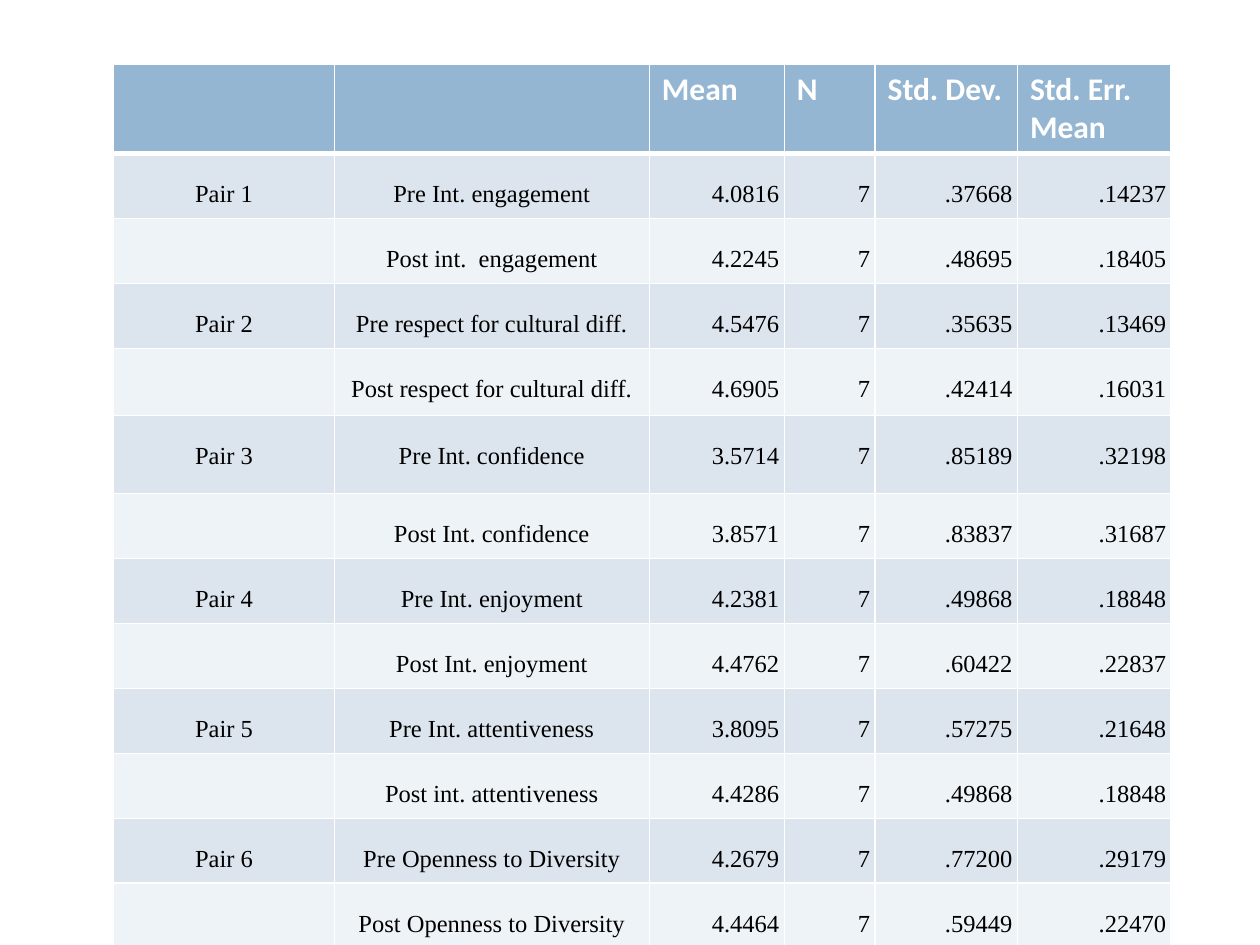
from dataclasses import dataclass

from lxml import etree
from pptx import Presentation
from pptx import util as u
from pptx.dml.color import RGBColor
from pptx.enum import text
from pptx.oxml import ns

HUES = {
    "head": "94B6D2",
    "odd": "DCE5EE",
    "even": "EEF3F7",
    "line": "FFFFFF",
    "title": "FFFFFF",
    "body": "000000",
}
WIDTHS = [4.45, 6.35, 2.72, 1.83, 2.87, 3.1]
HEADS = ["", "", "Mean", "N", "Std. Dev.", "Std. Err. Mean"]
STEP = 1.31
TALL = {0: 1.68, 4: 1.35, 5: 1.57}
PAD = u.Cm(0.1)


@dataclass
class Score:
    label: str
    mean: str
    dev: str
    err: str
    count: str = "7"


SCORES = [
    Score("Pre Int. engagement", "4.0816", ".37668", ".14237"),
    Score("Post int.  engagement", "4.2245", ".48695", ".18405"),
    Score("Pre respect for cultural diff.", "4.5476", ".35635", ".13469"),
    Score("Post respect for cultural diff.", "4.6905", ".42414", ".16031"),
    Score("Pre Int. confidence", "3.5714", ".85189", ".32198"),
    Score("Post Int. confidence", "3.8571", ".83837", ".31687"),
    Score("Pre Int. enjoyment", "4.2381", ".49868", ".18848"),
    Score("Post Int. enjoyment", "4.4762", ".60422", ".22837"),
    Score("Pre Int. attentiveness", "3.8095", ".57275", ".21648"),
    Score("Post int. attentiveness", "4.4286", ".49868", ".18848"),
    Score("Pre Openness to Diversity", "4.2679", ".77200", ".29179"),
    Score("Post Openness to Diversity", "4.4464", ".59449", ".22470"),
]


def edge(cell, side: str, width: float) -> None:
    props = cell._tc.get_or_add_tcPr()
    line = etree.SubElement(props, ns.qn(f"a:ln{side}"), w=str(u.Pt(width)))
    fill = etree.SubElement(line, ns.qn("a:solidFill"))
    etree.SubElement(fill, ns.qn("a:srgbClr"), val=HUES["line"])


def paint(cell, row: int) -> None:
    for side in "LRTB":
        thick = (row, side) in ((0, "B"), (1, "T"))
        edge(cell, side, 3 if thick else 1)
    hue = "head" if row == 0 else "odd" if row % 2 else "even"
    cell.fill.solid()
    cell.fill.fore_color.rgb = RGBColor.from_string(HUES[hue])


def style(para, face: str, size: int, bold: bool, hue: str) -> None:
    font = para.font
    font.name = face
    font.size = u.Pt(size)
    font.bold = bold
    font.color.rgb = RGBColor.from_string(HUES[hue])


def write(cell, words: str, row: int, col: int) -> None:
    cell.text = words
    para = cell.text_frame.paragraphs[0]
    if row == 0:
        style(para, "Calibri", 18, True, "title")
        return
    cell.margin_left = cell.margin_right = 0
    cell.margin_top = cell.margin_bottom = 0
    para.alignment = text.PP_ALIGN.CENTER if col < 2 else text.PP_ALIGN.RIGHT
    para.line_spacing = 2.0
    if col != 1:
        para.space_after = u.Pt(10)
        props = para._p.get_or_add_pPr()
        for side in ("marL", "marR"):
            props.set(side, str(PAD))
    style(para, "Times New Roman", 14, False, "body")


def build() -> None:
    deck = Presentation()
    deck.slide_width, deck.slide_height = u.Cm(25.4), u.Cm(19.05)
    slide = deck.slides.add_slide(deck.slide_layouts[6])

    rows = [HEADS]
    for i, s in enumerate(SCORES):
        pair = "" if i % 2 else f"Pair {i // 2 + 1}"
        rows.append([pair, s.label, s.mean, s.count, s.dev, s.err])
    highs = [TALL.get(i, STEP) for i in range(len(rows))]

    frame = slide.shapes.add_table(
        len(rows), len(WIDTHS), u.Cm(2.29), u.Cm(1.29),
        u.Cm(sum(WIDTHS)), u.Cm(sum(highs)))
    grid = frame.table
    for col, width in zip(grid.columns, WIDTHS):
        col.width = u.Cm(width)
    for r, (words, high) in enumerate(zip(rows, highs)):
        grid.rows[r].height = u.Cm(high)
        for c, word in enumerate(words):
            cell = grid.cell(r, c)
            paint(cell, r)
            if word:
                write(cell, word, r, c)
    deck.save("out.pptx")


if __name__ == "__main__":
    build()
